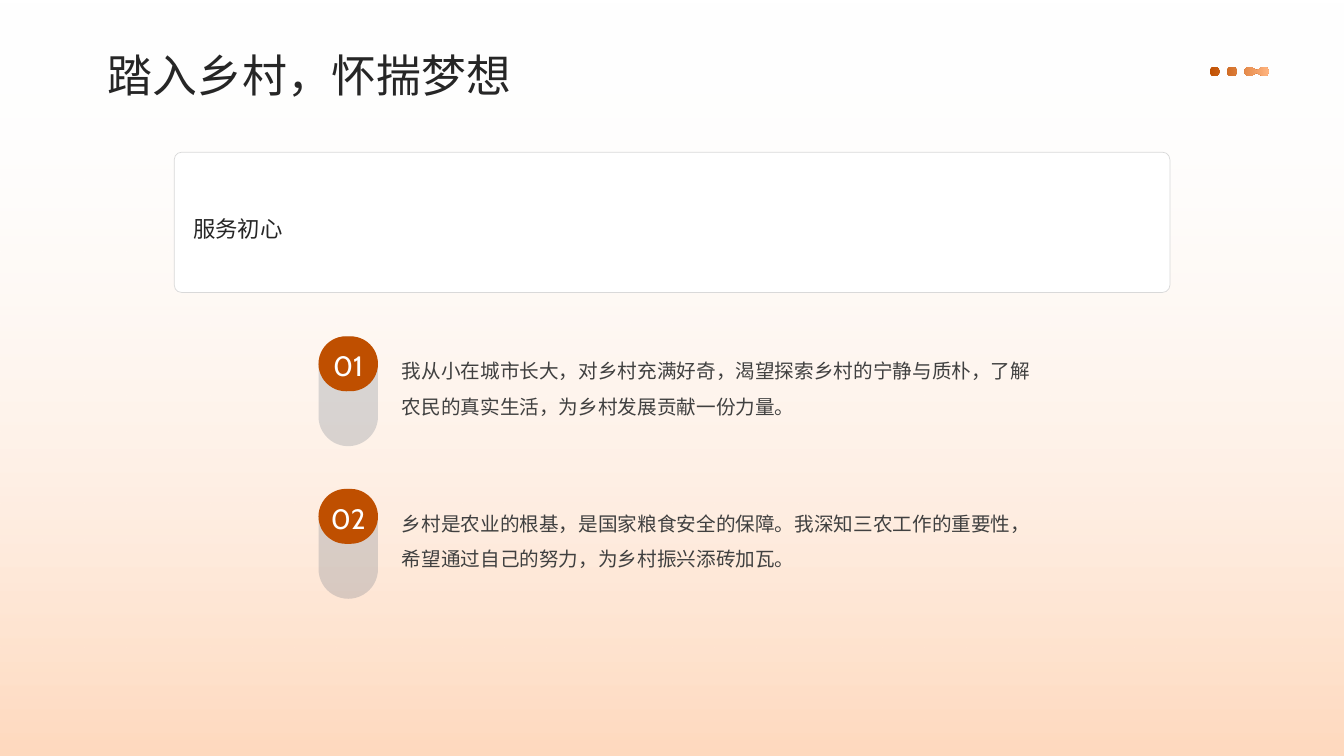
from math import cos, radians, sin

from lxml.etree import SubElement
from pptx import Presentation
from pptx.dml.color import RGBColor
from pptx.enum.shapes import MSO_SHAPE as Preset
from pptx.enum.text import MSO_ANCHOR as Anchor, PP_ALIGN as Align
from pptx.oxml.ns import qn
from pptx.util import Pt

WIDTH, HEIGHT = 960, 540
CJK, LATIN = "Noto Sans CJK SC", "Cabin"
WHITE, PEACH, RUST, APRICOT = "FFFFFF", "FFDABF", "BF4F00", "FFB47F"
SLATE, INK, BODY, BORDER = "44546A", "262626", "404040", "D9D9D9"
UNITS_PER_POINT = 100  # freeform vertices are whole units

REASONS = [
    "我从小在城市长大，对乡村充满好奇，渴望探索乡村的宁静与质朴，了解农民的真实生活，为乡村发展贡献一份力量。",
    "乡村是农业的根基，是国家粮食安全的保障。我深知三农工作的重要性，希望通过自己的努力，为乡村振兴添砖加瓦。",
]


def color(value):
    return RGBColor.from_string(value)


def set_alpha(color_element, percent):
    SubElement(color_element, qn("a:alpha"), val=str(percent * 1000))


def write_text(shape, text, font=CJK, size=14, fill=BODY, spacing=1.0,
               inset=0, anchor=Anchor.TOP, align=Align.LEFT, wrap=True):
    frame = shape.text_frame
    frame.word_wrap = wrap
    frame.vertical_anchor = anchor
    frame.margin_left = frame.margin_right = Pt(inset)
    frame.margin_top = frame.margin_bottom = Pt(inset)
    para = frame.paragraphs[0]
    para.alignment = align
    para.line_spacing = spacing
    span = para.add_run()
    span.text = text
    span.font.size = Pt(size)
    span.font.color.rgb = color(fill)
    span.font.name = font
    SubElement(span.font._element, qn("a:ea"), typeface=font)


def arc(center_x, center_y, radius, start, end, step=15):
    """Points along a circle, angles in degrees, clockwise on the page."""
    return [(center_x + radius * cos(radians(angle)),
             center_y + radius * sin(radians(angle)))
            for angle in range(start, end + 1, step)]


class SlideBuilder:
    def __init__(self, page):
        self.shapes = page.shapes

    def finish(self, shape, fill=None, opacity=100, line=None):
        shape.shadow.inherit = False
        if fill:
            shape.fill.solid()
            shape.fill.fore_color.rgb = color(fill)
            if opacity < 100:
                set_alpha(shape._element.spPr.find(
                    qn("a:solidFill") + "/" + qn("a:srgbClr")), opacity)
        if line:
            shape.line.color.rgb = color(line)
            shape.line.width = Pt(0.5)
        else:
            shape.line.fill.background()
        return shape

    def gradient(self, shape, first, last, clockwise, first_opacity=100):
        self.finish(shape)
        shape.fill.gradient()
        shape.fill.gradient_angle = -clockwise % 360
        stops = shape.fill.gradient_stops
        for stop, value, position in zip(stops, (first, last), (0, 1)):
            stop.color.rgb = color(value)
            stop.position = position
        if first_opacity < 100:
            set_alpha(shape._element.spPr.find(".//" + qn("a:srgbClr")), first_opacity)

    def block(self, preset, left, top, width, height, corner=None, **style):
        shape = self.shapes.add_shape(preset, Pt(left), Pt(top), Pt(width), Pt(height))
        if corner is not None:
            shape.adjustments[0] = corner
        return self.finish(shape, **style)

    def label(self, left, top, width, height, text, **style):
        box = self.shapes.add_textbox(Pt(left), Pt(top), Pt(width), Pt(height))
        write_text(box, text, **style)

    def outline(self, contours):
        """One freeform made of several closed contours."""
        scaled = [[(x * UNITS_PER_POINT, y * UNITS_PER_POINT) for x, y in contour]
                  for contour in contours]
        builder = self.shapes.build_freeform(*scaled[0][0], scale=Pt(1) / UNITS_PER_POINT)
        for number, contour in enumerate(scaled):
            if number:
                builder.move_to(*contour[0])
            builder.add_line_segments(contour[1:], close=True)
        return builder.convert_to_shape()

    def reason(self, number, top, text):
        left, width = 227.5, 42.5
        self.block(Preset.ROUNDED_RECTANGLE, left, top, width, 78.5,
                   corner=0.5, fill=SLATE, opacity=20)
        badge = self.block(Preset.ROUNDED_RECTANGLE, left, top, width, 39.25,
                           corner=0.5, fill=RUST)
        write_text(badge, f"{number:02}", font=LATIN, size=20, fill=WHITE, spacing=1.1,
                   inset=8.5, anchor=Anchor.MIDDLE, align=Align.CENTER, wrap=False)
        self.label(278.6, top - 0.4, 480.2, 82.8, text, spacing=1.5, inset=8.5)

    def dots(self):
        """Two single dots, then two dots merged by a narrow waist."""
        middle, radius, waist = 51.1, 3.5, 0.9
        first, second, third, fourth = 867.5, 880, 892.5, 903
        bridge = (third + fourth) / 2
        pair = (arc(third, middle, radius, 45, 315) + [(bridge, middle - waist)]
                + arc(fourth, middle, radius, 225, 495) + [(bridge, middle + waist)])
        singles = [arc(x, middle, radius, 0, 345) for x in (first, second)]
        self.gradient(self.outline(singles + [pair]), RUST, APRICOT, clockwise=0)


def main():
    deck = Presentation()
    deck.slide_width, deck.slide_height = Pt(WIDTH), Pt(HEIGHT)
    slide = SlideBuilder(deck.slides.add_slide(deck.slide_layouts[6]))

    backdrop = slide.block(Preset.RECTANGLE, 0, 0, WIDTH, HEIGHT)
    slide.gradient(backdrop, WHITE, PEACH, clockwise=90, first_opacity=0)
    for index, text in enumerate(REASONS):
        slide.reason(index + 1, 240.2 + 109 * index, text)
    slide.block(Preset.ROUNDED_RECTANGLE, 124.5, 108.7, 711.2, 100.2,
                corner=0.053, fill=WHITE, line=BORDER)
    slide.label(138, 118, 684, 83, "服务初心", size=16, fill=INK,
                spacing=1.4, anchor=Anchor.MIDDLE)
    slide.label(77, 33.1, 775, 36.7, "踏入乡村，怀揣梦想", size=32, fill=INK,
                spacing=1.1, anchor=Anchor.MIDDLE)
    slide.dots()
    deck.save("out.pptx")


if __name__ == "__main__":
    main()
